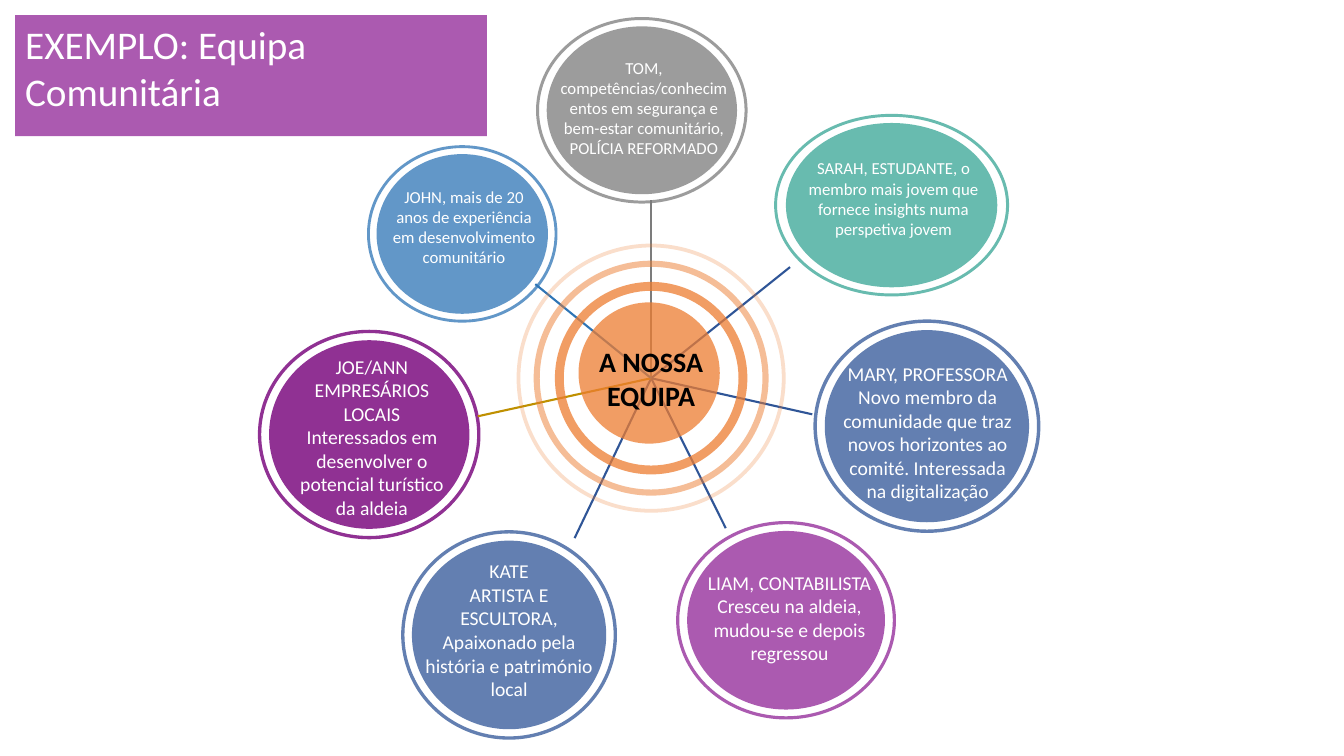
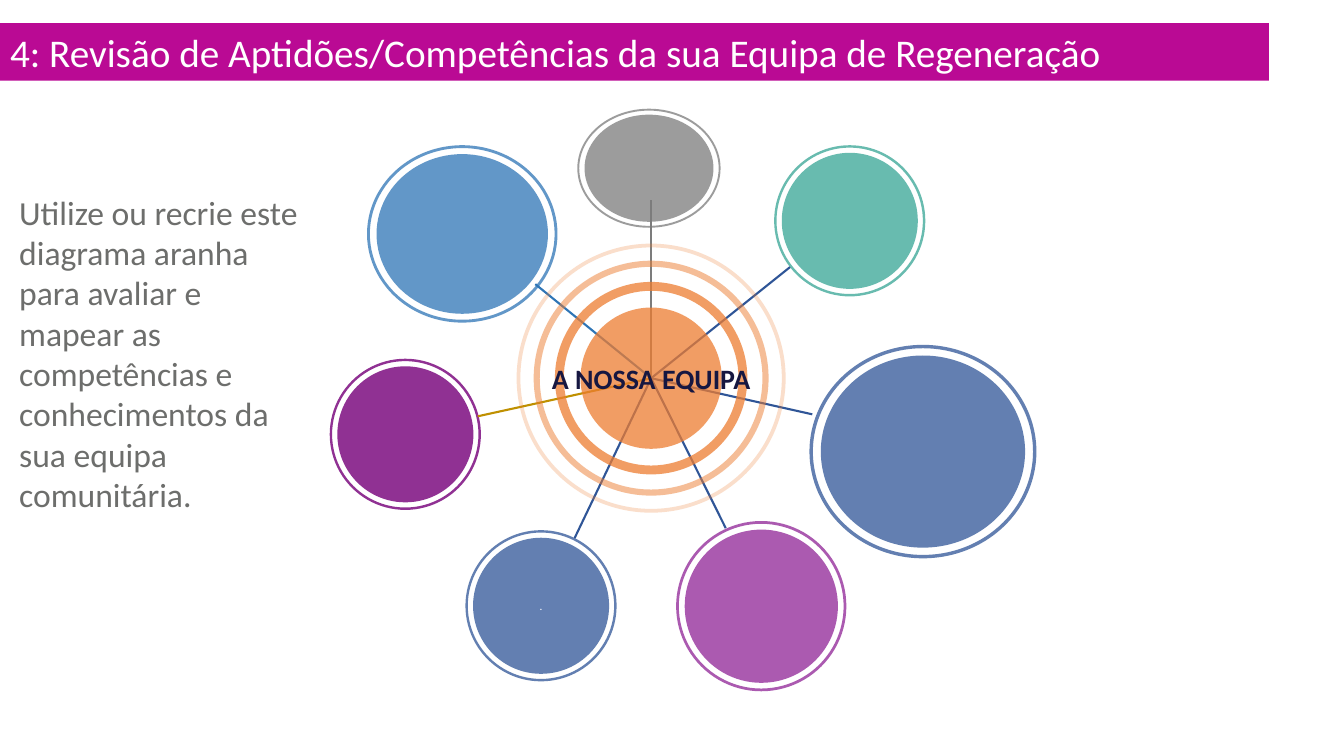
from lxml.etree import SubElement
from pptx import Presentation
from pptx.dml.color import RGBColor
from pptx.enum.shapes import MSO_CONNECTOR, MSO_SHAPE
from pptx.enum.text import MSO_ANCHOR, MSO_AUTO_SIZE, PP_ALIGN
from pptx.oxml.ns import qn
from pptx.util import Cm, Pt

FONT = "Calibri"
WHITE = RGBColor(0xFF, 0xFF, 0xFF)
BLACK = RGBColor(0x00, 0x00, 0x00)
NAVY = RGBColor(0x16, 0x17, 0x41)
BODY_GRAY = RGBColor(0x6D, 0x6E, 0x6C)
GRAY = RGBColor(0x7C, 0x7C, 0x7C)
TEAL = RGBColor(0x68, 0xBB, 0xAF)
INDIGO = RGBColor(0x2F, 0x55, 0x97)
ORCHID = RGBColor(0xAB, 0x5A, 0xB0)
PURPLE = RGBColor(0x90, 0x31, 0x93)
BLUE = RGBColor(0x2E, 0x75, 0xB6)
GOLD = RGBColor(0xBF, 0x90, 0x00)
ORANGE = RGBColor(0xED, 0x7D, 0x31)
MAGENTA = RGBColor(0xBA, 0x0A, 0x94)

HUB = (16.41, 9.53)
HUB_RINGS = [(4.85, 0.046, 75), (5.92, 0.026, 50), (6.78, 0.014, 25)]
CORE_SIZE = 3.56
MEMBER_RING = 0.016
DISC_SHARE = 0.9

MEMBERS = {
    "Tom": dict(color=GRAY, opacity=75, spoke=GRAY, spoke_end=(16.41, 5.05)),
    "Sarah": dict(color=TEAL, opacity=100, spoke=INDIGO, spoke_end=(19.91, 6.73)),
    "Mary": dict(color=INDIGO, opacity=75, spoke=INDIGO, spoke_end=(20.47, 10.44)),
    "Liam": dict(color=ORCHID, opacity=100, spoke=INDIGO, spoke_end=(18.29, 13.31)),
    "Kate": dict(color=INDIGO, opacity=75, spoke=INDIGO, spoke_end=(14.48, 13.56)),
    "Joe": dict(color=PURPLE, opacity=100, spoke=GOLD, spoke_end=(12.04, 10.49)),
    "John": dict(color=BLUE, opacity=75, spoke=BLUE, spoke_end=(13.49, 7.16)),
}

EXAMPLE = dict(
    title="EXEMPLO: Equipa Comunitária",
    band=(0.38, 0.38, 11.89, 3.05),
    band_color=ORCHID,
    core=(14.58, 7.62),
    label=("A NOSSA EQUIPA", BLACK, 3.9),
    circles={
        "Tom": (13.51, 0.43, 5.33, 4.7),
        "Sarah": (19.51, 2.87, 5.92, 4.6),
        "Mary": (20.5, 8.05, 5.72, 5.38),
        "Liam": (17.04, 13.13, 5.54, 5),
        "Kate": (10.11, 13.36, 5.44, 5.28),
        "Joe": (6.5, 8.31, 5.61, 5.28),
        "John": (9.25, 3.66, 4.8, 4.47),
    },
    profiles=[
        ("TOM, competências/conhecimentos em segurança e bem-estar comunitário, "
         "POLÍCIA REFORMADO", 12, (13.84, 1.32, 4.78, 3.43)),
        ("SARAH, ESTUDANTE, o membro mais jovem que fornece insights numa "
         "perspetiva jovem", 12, (20.02, 3.86, 5, 2.31)),
        ("JOHN, mais de 20 anos de experiência em desenvolvimento comunitário",
         12, (9.5, 4.57, 4.39, 2.82)),
        ("MARY, PROFESSORA\nNovo membro da comunidade que traz novos horizontes "
         "ao comité. Interessada na digitalização", 14, (20.88, 8.99, 5, 3.84)),
        ("JOE/ANN\nEMPRESÁRIOS LOCAIS\nInteressados em desenvolver o potencial "
         "turístico da aldeia", 14, (7.19, 8.81, 4.37, 4.45)),
        ("KATE\nARTISTA E ESCULTORA, Apaixonado pela história e património local",
         14, (10.39, 13.97, 4.88, 3.84)),
        ("LIAM, CONTABILISTA\nCresceu na aldeia, mudou-se e depois regressou",
         14, (17.4, 14.25, 5, 3.25)),
    ],
)

REVIEW = dict(
    title="4: Revisão de Aptidões/Competências da sua Equipa de Regeneração",
    band=(0, 0.58, 31.98, 1.45),
    band_color=MAGENTA,
    core=(14.63, 7.75),
    label=("A NOSSA EQUIPA", NAVY, 5.56),
    circles={
        "Tom": (14.55, 2.74, 3.61, 3),
        "Sarah": (19.51, 3.66, 3.81, 3.81),
        "Mary": (20.4, 8.69, 5.72, 5.38),
        "Liam": (17.04, 13.13, 4.29, 4.29),
        "Kate": (11.73, 13.36, 3.81, 3.81),
        "Joe": (8.31, 9.04, 3.81, 3.81),
        "John": EXAMPLE["circles"]["John"],
    },
    disc_marks={"Kate": "."},
    guidance="Utilize ou recrie este diagrama aranha para avaliar e mapear as "
             "competências e conhecimentos da sua equipa comunitária.",
    guidance_area=(0.23, 4.7, 7.65, 8.46),
)


def place(shape, area):
    shape.left, shape.top, shape.width, shape.height = map(Cm, area)


def write(shape, text, size, color, align=PP_ALIGN.LEFT, anchor=MSO_ANCHOR.TOP, bold=False):
    frame = shape.text_frame
    frame.text = text
    frame.word_wrap = True
    frame.auto_size = MSO_AUTO_SIZE.NONE
    frame.vertical_anchor = anchor
    for paragraph in frame.paragraphs:
        paragraph.alignment = align
        paragraph.space_before = Pt(0)
        for run in paragraph.runs:
            run.font.name = FONT
            run.font.size = Pt(size)
            run.font.bold = bold
            run.font.color.rgb = color


def add_round(slide, kind, area, color, opacity):
    round_shape = slide.shapes.add_shape(kind, *map(Cm, area))
    round_shape.shadow.inherit = False
    round_shape.line.fill.background()
    round_shape.fill.solid()
    round_shape.fill.fore_color.rgb = color
    if opacity < 100:
        tint = round_shape.fill._xPr.find(".//" + qn("a:srgbClr"))
        SubElement(tint, qn("a:alpha"), val=str(opacity * 1000))
    return round_shape


def add_ring(slide, area, thickness, color, opacity):
    ring = add_round(slide, MSO_SHAPE.DONUT, area, color, opacity)
    ring.adjustments[0] = thickness


def add_member(slide, area, color, opacity, mark):
    left, top, width, height = area
    margin = (1 - DISC_SHARE) / 2
    disc_area = (left + width * margin, top + height * margin,
                 width * DISC_SHARE, height * DISC_SHARE)
    disc = add_round(slide, MSO_SHAPE.OVAL, disc_area, color, opacity)
    if mark:
        write(disc, mark, 8, WHITE, PP_ALIGN.CENTER, MSO_ANCHOR.MIDDLE)
    add_ring(slide, area, MEMBER_RING, color, opacity)


def add_spoke(slide, end, color):
    spoke = slide.shapes.add_connector(MSO_CONNECTOR.STRAIGHT, *map(Cm, end + HUB))
    spoke.line.color.rgb = color
    spoke.line.width = Pt(1.5)
    SubElement(spoke._element.spPr, qn("a:effectLst"))


def around_hub(width, height):
    return HUB[0] - width / 2, HUB[1] - height / 2, width, height


def add_text(slide, area, *style, **options):
    write(slide.shapes.add_textbox(*map(Cm, area)), *style, **options)


def add_title(slide, content):
    title = slide.shapes.title
    place(title, content["band"])
    title.fill.solid()
    title.fill.fore_color.rgb = content["band_color"]
    write(title, content["title"], 28, WHITE)


def add_spider(slide, content):
    marks = content.get("disc_marks", {})
    for name, member in MEMBERS.items():
        add_member(slide, content["circles"][name], member["color"],
                   member["opacity"], marks.get(name))
    for member in MEMBERS.values():
        add_spoke(slide, member["spoke_end"], member["spoke"])
    core_area = content["core"] + (CORE_SIZE, CORE_SIZE)
    add_round(slide, MSO_SHAPE.OVAL, core_area, ORANGE, 75)
    for size, thickness, opacity in HUB_RINGS:
        add_ring(slide, around_hub(size, size), thickness, ORANGE, opacity)
    label, color, width = content["label"]
    add_text(slide, around_hub(width, 2), label, 20, color,
             PP_ALIGN.CENTER, MSO_ANCHOR.MIDDLE, bold=True)


def add_guidance(slide, content):
    guidance = slide.placeholders[1]
    place(guidance, content["guidance_area"])
    write(guidance, content["guidance"], 24, BODY_GRAY)
    properties = guidance.text_frame.paragraphs[0]._p.get_or_add_pPr()
    properties.set("marL", "0")
    properties.set("indent", "0")
    SubElement(properties, qn("a:buNone"))


def main():
    deck = Presentation()
    deck.slide_width, deck.slide_height = Cm(33.87), Cm(19.05)
    content_layout, title_layout = deck.slide_layouts[1], deck.slide_layouts[5]

    example = deck.slides.add_slide(title_layout)
    add_title(example, EXAMPLE)
    add_spider(example, EXAMPLE)
    for text, size, area in EXAMPLE["profiles"]:
        add_text(example, area, text, size, WHITE, PP_ALIGN.CENTER)

    review = deck.slides.add_slide(content_layout)
    add_title(review, REVIEW)
    add_guidance(review, REVIEW)
    add_spider(review, REVIEW)

    deck.save("out.pptx")


if __name__ == "__main__":
    main()
